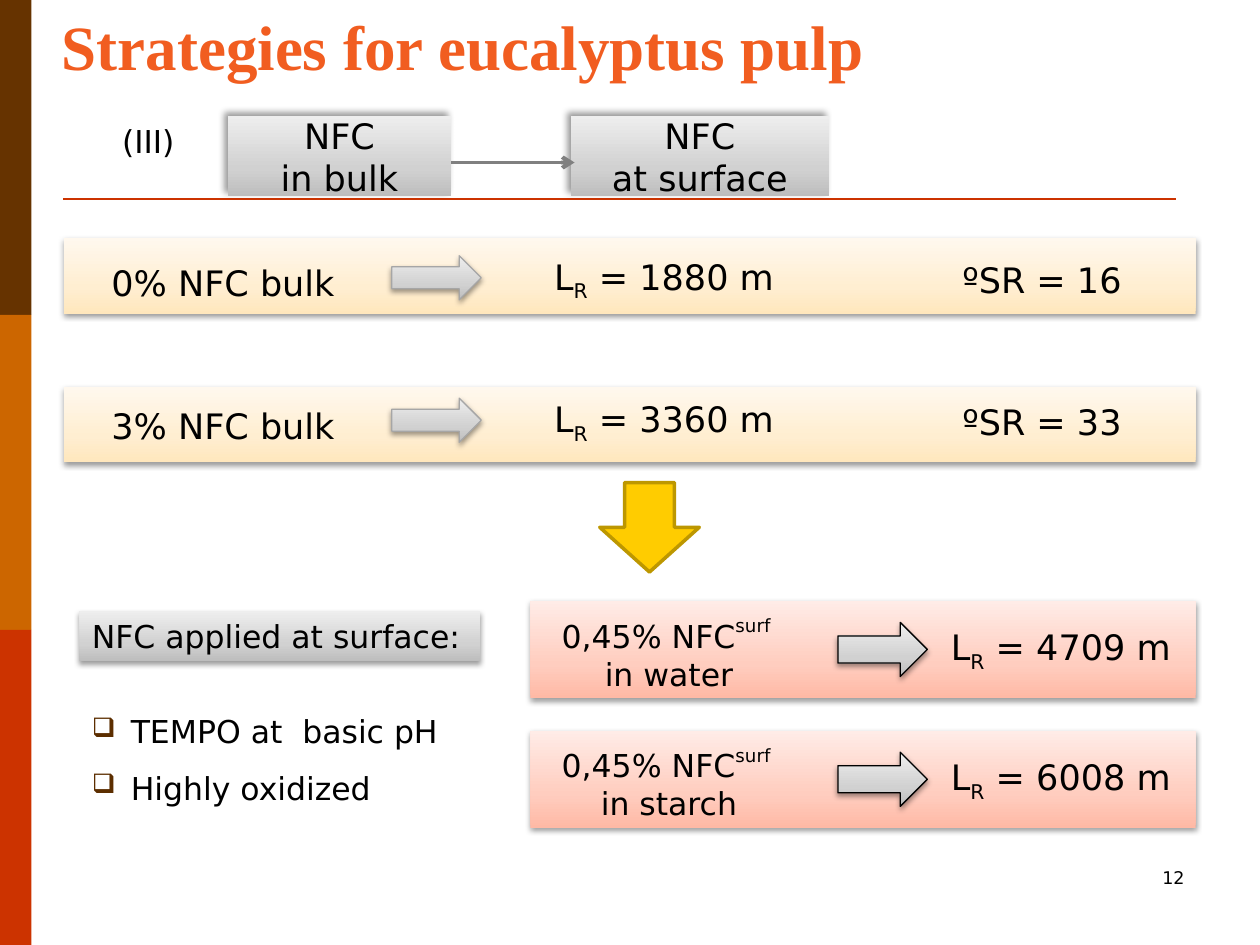
from lxml.etree import SubElement
from pptx import Presentation
from pptx.dml.color import RGBColor
from pptx.enum.shapes import MSO_CONNECTOR, MSO_SHAPE
from pptx.enum.text import MSO_ANCHOR, MSO_AUTO_SIZE, PP_ALIGN
from pptx.oxml.ns import qn
from pptx.util import Inches, Pt

SANS = "DejaVu Sans"
GRAY = [(0, "BDBDBD"), (35, "D1D1D1"), (100, "EEEEEE")]
CREAM = [(0, "FFE7BD"), (35, "FFEED1"), (100, "FFF8EE")]
PINK = [(0, "FFB9A5"), (35, "FFCDBF"), (100, "FFECE7")]
SOFT = (38, 3.1, 1.6, 90)  # opacity %, blur pt, distance pt, angle
DEEP = (40, 4, 3, 225)
LEFT, MID, RIGHT = PP_ALIGN.LEFT, PP_ALIGN.CENTER, PP_ALIGN.RIGHT


def color(code):
    return RGBColor.from_string(code)


def style(font, **values):
    look = {"name": SANS, "size": Pt(20), "bold": False, **values}
    tint = look.pop("tint", "000000")
    for key, value in look.items():
        setattr(font, key, value)
    font.color.rgb = color(tint)


def node(parent, tag, **values):
    item = SubElement(parent, qn(tag))
    for key, value in values.items():
        item.set(key, str(value))
    return item


def blend(shape, stops):
    """Fill from bottom to top with the given stops."""
    shape.fill.gradient()
    shape.fill.gradient_angle = 90
    group = shape._element.spPr.find(".//" + qn("a:gsLst"))
    for old in list(group):
        group.remove(old)
    for place, code in stops:
        stop = node(group, "a:gs", pos=place * 1000)
        node(stop, "a:srgbClr", val=code)


def shade(shape, cast):
    alpha, blur, dist, angle = cast
    effects = shape._element.spPr.find(qn("a:effectLst"))
    outer = node(effects, "a:outerShdw", blurRad=Pt(blur), dist=Pt(dist),
                 dir=angle * 60000, rotWithShape=0)
    tone = node(outer, "a:srgbClr", val="000000")
    node(tone, "a:alpha", val=alpha * 1000)


def add_shape(slide, box, fill, kind=MSO_SHAPE.RECTANGLE, edge=None,
              width=0.75, cast=None):
    shape = slide.shapes.add_shape(kind, *map(Inches, box))
    shape.shadow.inherit = False
    if isinstance(fill, str):
        shape.fill.solid()
        shape.fill.fore_color.rgb = color(fill)
    else:
        blend(shape, fill)
    if edge:
        shape.line.color.rgb = color(edge)
        shape.line.width = Pt(width)
    else:
        shape.line.fill.background()
    if cast:
        shade(shape, cast)
    return shape


def write(shape, lines, size=20, align=MID, anchor=MSO_ANCHOR.MIDDLE, wrap=True):
    """Each line is a string or a list of (text, baseline %) runs."""
    frame = shape.text_frame
    frame.word_wrap = wrap
    frame.vertical_anchor = anchor
    for i, line in enumerate(lines):
        para = frame.add_paragraph() if i else frame.paragraphs[0]
        para.alignment = align
        for text, base in [(line, 0)] if isinstance(line, str) else line:
            run = para.add_run()
            run.text = text
            style(run.font, size=Pt(size))
            if base:
                run._r.get_or_add_rPr().set("baseline", str(base * 1000))
    return frame


def add_text(slide, box, lines, **values):
    return write(slide.shapes.add_textbox(*map(Inches, box)), lines, **values)


def add_line(slide, start, end, code, width, head=False):
    line = slide.shapes.add_connector(
        MSO_CONNECTOR.STRAIGHT, *map(Inches, start + end))
    line.line.color.rgb = color(code)
    line.line.width = Pt(width)
    if head:
        node(line.line._get_or_add_ln(), "a:tailEnd", type="arrow")
    node(line._element.spPr, "a:effectLst")


def length(value):
    return [[("L", 0), ("R", -25), (f" = {value} m", 0)]]


def add_bulk(slide, top, mid, share, value, degree):
    """Cream row: bulk share, breaking length and drainage degree."""
    add_shape(slide, (0.51, top, 8.98, 0.6), CREAM, cast=SOFT)
    add_text(slide, (0.59, mid - 0.35, 2.36, 0.77), [f"{share}% NFC bulk"])
    add_shape(slide, (3.11, mid - 0.18, 0.71, 0.35), GRAY,
              MSO_SHAPE.RIGHT_ARROW, "A6A6A6", cast=SOFT)
    add_text(slide, (4.13, mid - 0.38, 2.28, 0.77), length(value))
    add_text(slide, (7.13, mid - 0.38, 2.28, 0.77), [f"ºSR = {degree}"])


def add_surface(slide, top, medium, value):
    """Pink row: surface treatment and breaking length."""
    add_shape(slide, (4.21, top, 5.28, 0.77), PINK, cast=SOFT)
    add_text(slide, (4.13, top + 0.03, 2.36, 0.77),
             [[("0,45% NFC", 0), ("surf ", 50)], f"in {medium}"], size=18)
    add_shape(slide, (6.65, top + 0.17, 0.71, 0.43), GRAY,
              MSO_SHAPE.RIGHT_ARROW, "000000", cast=SOFT)
    add_text(slide, (7.28, top, 2.28, 0.77), length(value))


def add_list(slide, box, lines):
    frame = add_text(slide, box, lines, size=18, align=LEFT,
                     anchor=MSO_ANCHOR.TOP, wrap=False)
    for para in frame.paragraphs:
        para.line_spacing = 1.5
        props = para._p.get_or_add_pPr()
        props.set("marL", str(Inches(0.31)))
        props.set("indent", str(Inches(-0.31)))
        node(node(props, "a:buClr"), "a:srgbClr", val="5C2E00")
        node(props, "a:buSzPct", val=85000)
        node(props, "a:buChar", char="❑")


def set_title(slide, text):
    title = slide.shapes.title
    place = {"left": 0.39, "top": 0.13, "width": 9.17, "height": 0.58}
    for key, value in place.items():
        setattr(title, key, Inches(value))
    frame = title.text_frame
    frame.text = text
    frame.auto_size = MSO_AUTO_SIZE.NONE
    frame.vertical_anchor = MSO_ANCHOR.BOTTOM
    para = frame.paragraphs[0]
    para.alignment = LEFT
    style(para.runs[0].font, name="Times New Roman", size=Pt(36), bold=True,
          tint="F15D20")


def main():
    deck = Presentation()
    deck.slide_width, deck.slide_height = Inches(10), Inches(7.5)
    slide = deck.slides.add_slide(deck.slide_layouts[5])

    # Side bands, rule and title
    for i, code in enumerate(("663300", "CC6600", "CC3300")):
        add_shape(slide, (0, 2.5 * i, 0.25, 2.5), code)
    add_line(slide, (0.5, 1.58), (9.33, 1.58), "CC3300", 1.5)
    set_title(slide, "Strategies for eucalyptus pulp")

    # Strategy: from bulk to surface
    add_text(slide, (0.87, 0.92, 0.75, 0.4), ["(III)"], size=18, align=LEFT,
             anchor=MSO_ANCHOR.TOP, wrap=False)
    for left, width, place in ((1.81, 1.77, "in bulk"), (4.53, 2.05, "at surface")):
        step = add_shape(slide, (left, 0.92, width, 0.64), GRAY, cast=DEEP)
        write(step, ["NFC", place])
    add_line(slide, (3.58, 1.29), (4.56, 1.29), "808080", 2.25, head=True)

    # Bulk results
    add_bulk(slide, 1.89, 2.21, 0, 1880, 16)
    add_bulk(slide, 3.07, 3.34, 3, 3360, 33)
    add_shape(slide, (4.76, 3.83, 0.79, 0.71), "FFCC00",
              MSO_SHAPE.DOWN_ARROW, "BD9700", 2)

    # Surface results
    label = add_shape(slide, (0.63, 4.85, 3.18, 0.4), GRAY, cast=SOFT)
    write(label, ["NFC applied at surface:"], size=18, align=LEFT, wrap=False)
    add_list(slide, (0.63, 5.45, 2.99, 1.01),
             ["TEMPO at  basic pH", "Highly oxidized"])
    add_surface(slide, 4.77, "water", 4709)
    add_surface(slide, 5.8, "starch", 6008)

    # Page number
    add_text(slide, (7.17, 6.83, 2.33, 0.5), ["12"], size=10, align=RIGHT,
             anchor=MSO_ANCHOR.TOP)
    deck.save("out.pptx")


if __name__ == "__main__":
    main()
